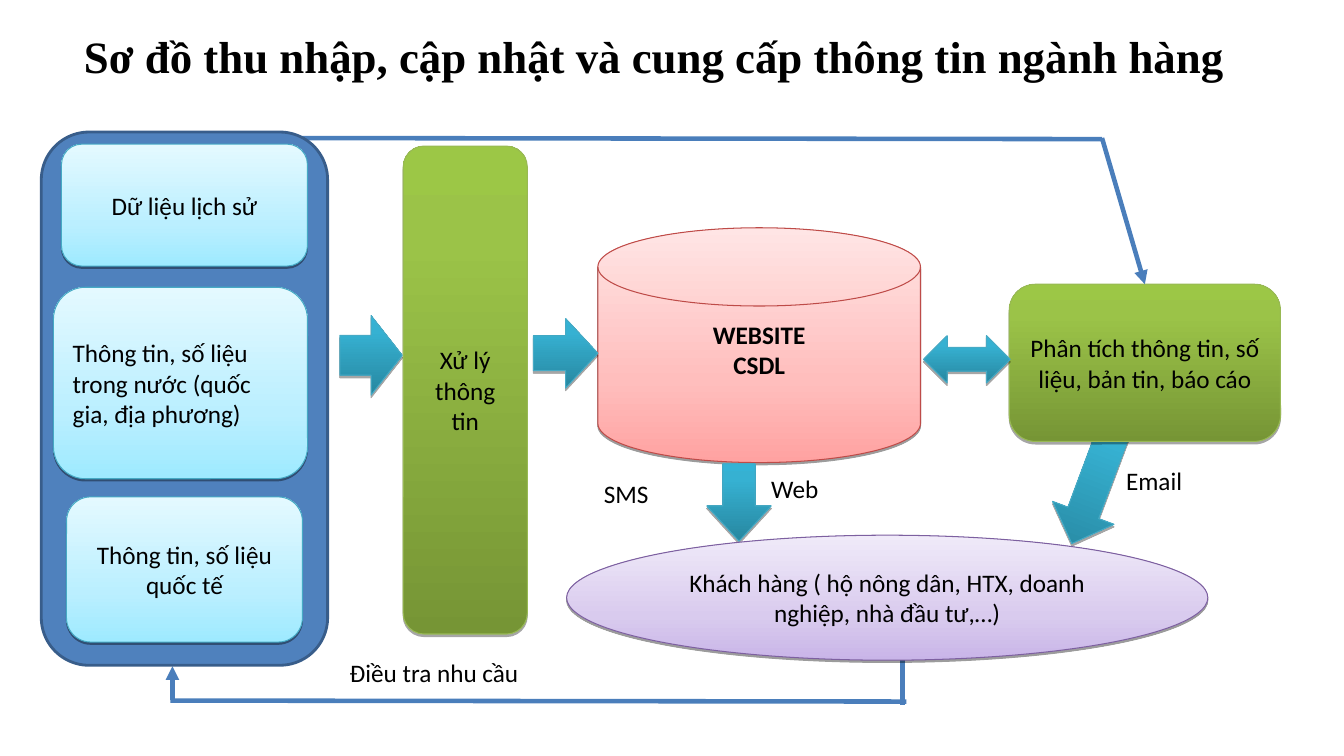
from copy import deepcopy
from lxml import etree
from pptx import Presentation
from pptx.dml.color import RGBColor
from pptx.enum.shapes import MSO_CONNECTOR, MSO_SHAPE
from pptx.enum.text import MSO_ANCHOR, MSO_AUTO_SIZE, PP_ALIGN
from pptx.oxml.ns import qn
from pptx.util import Inches, Pt

ROUND, DISK = MSO_SHAPE.ROUNDED_RECTANGLE, MSO_SHAPE.FLOWCHART_MAGNETIC_DISK
OVAL, RECT = MSO_SHAPE.OVAL, MSO_SHAPE.RECTANGLE
RIGHT, DOWN, BOTH = MSO_SHAPE.RIGHT_ARROW, MSO_SHAPE.DOWN_ARROW, MSO_SHAPE.LEFT_RIGHT_ARROW
STRAIGHT = MSO_CONNECTOR.STRAIGHT
LEFT, MID = PP_ALIGN.LEFT, PP_ALIGN.CENTER
TOP, CENTER = MSO_ANCHOR.TOP, MSO_ANCHOR.MIDDLE

THEME = {
    "text": "000000", "paper": "FFFFFF", "link": "4A7EBB",
    "panel": "4F81BD", "edge": "385D8A",
    "head": ("Times New Roman", 32), "body": ("Calibri", 18),
    "cyan": {"line": "46AAC5", "shade": (38, 1.6),
             "stops": [(0, "9EEAFF"), (0.35, "BBEFFF"), (1, "E4F9FF")]},
    "red": {"line": "BE4B48", "shade": (38, 1.6),
            "stops": [(0, "FFA2A1"), (0.35, "FFBEBD"), (1, "FFE5E5")]},
    "violet": {"line": "7D60A0", "shade": (38, 1.6),
               "stops": [(0, "C9B5E8"), (0.35, "D9CBEE"), (1, "F0EAF9")]},
    "green": {"line": "98B954", "shade": (35, 1.8),
              "stops": [(0, "769535"), (0.8, "9BC348"), (1, "9CC746")]},
    "teal": {"line": "46AAC5", "shade": (35, 1.8),
             "stops": [(0, "2787A0"), (0.8, "36B1D2"), (1, "34B3D6")]},
}


def write(shape, lines, align=MID, anchor=CENTER, font="body", bold=False):
    frame = shape.text_frame
    frame.word_wrap = True
    frame.vertical_anchor = anchor
    for i, line in enumerate(lines):
        para = frame.add_paragraph() if i else frame.paragraphs[0]
        para.alignment = align
        run = para.add_run()
        run.text = line
        run.font.name, size = THEME[font]
        run.font.size = Pt(size)
        run.font.bold = bold
        run.font.color.rgb = RGBColor.from_string(THEME["text"])


def link(x1, y1, x2, y2, arrow=False):
    line = slide.shapes.add_connector(STRAIGHT, Inches(x1), Inches(y1), Inches(x2), Inches(y2))
    line.line.color.rgb = RGBColor.from_string(THEME["link"])
    line.line.width = Pt(3.25)
    props = line.element.spPr
    if arrow:
        etree.SubElement(props.find(qn("a:ln")), qn("a:tailEnd"), type="triangle")
    etree.SubElement(props, qn("a:effectLst"))
    return line


deck = Presentation()
deck.slide_width, deck.slide_height = Inches(13.33), Inches(7.5)
slide = deck.slides.add_slide(deck.slide_layouts[5])

title = slide.shapes.title
title.left, title.top = Inches(0.28), Inches(0.23)
title.width, title.height = Inches(12.42), Inches(0.64)
write(title, ["Sơ đồ thu nhập, cập nhật và cung cấp thông tin ngành hàng"], font="head", bold=True)
title.text_frame.auto_size = MSO_AUTO_SIZE.NONE

link(2.92, 1.37, 10.93, 1.38)
link(8.95, 6.49, 8.95, 6.99)
link(1.69, 6.95, 8.99, 6.96)
link(1.71, 6.94, 1.71, 6.61, True)

panel = slide.shapes.add_shape(ROUND, Inches(0.41), Inches(1.31), Inches(2.84), Inches(5.29))
panel.shadow.inherit = False
panel.fill.solid()
panel.fill.fore_color.rgb = RGBColor.from_string(THEME["panel"])
panel.line.color.rgb = RGBColor.from_string(THEME["edge"])
panel.line.width = Pt(2)

parts = {}
for name, kind, tone, x, y, w, h, lines in [
    ("mail", DOWN, "teal", 10.51, 4.26, 0.65, 1.17, []),
    ("past", ROUND, "cyan", 0.61, 1.43, 2.44, 1.21, ["Dữ liệu lịch sử"]),
    ("home", ROUND, "cyan", 0.53, 2.85, 2.52, 1.9,
     ["Thông tin, số liệu trong nước (quốc gia, địa phương)"]),
    ("world", ROUND, "cyan", 0.66, 4.93, 2.34, 1.44, ["Thông tin, số liệu quốc tế"]),
    ("process", ROUND, "green", 4, 1.45, 1.23, 4.84, ["Xử lý thông tin"]),
    ("store", DISK, "red", 5.93, 2.26, 3.2, 2.33, ["WEBSITE", "CSDL"]),
    ("report", ROUND, "green", 10.01, 2.82, 2.69, 1.56,
     ["Phân tích thông tin, số liệu, bản tin, báo cáo"]),
    ("input", RIGHT, "teal", 3.37, 3.13, 0.62, 0.79, []),
    ("save", RIGHT, "teal", 5.29, 3.16, 0.64, 0.69, []),
    ("share", BOTH, "teal", 9.16, 3.33, 0.86, 0.47, []),
    ("web", DOWN, "teal", 7.01, 4.6, 0.64, 0.77, []),
    ("client", OVAL, "violet", 5.62, 5.31, 6.36, 1.24,
     ["Khách hàng ( hộ nông dân, HTX, doanh nghiệp, nhà đầu tư,…)"]),
]:
    part = slide.shapes.add_shape(kind, Inches(x), Inches(y), Inches(w), Inches(h))
    parts[name] = part
    style = THEME[tone]
    part.fill.gradient()
    part.fill.gradient_angle = 90
    props = part.element.spPr
    stops = props.find(qn("a:gradFill")).find(qn("a:gsLst"))
    stops.append(deepcopy(stops[0]))
    for stop, (spot, color) in zip(part.fill.gradient_stops, style["stops"]):
        stop.position = spot
        stop.color.rgb = RGBColor.from_string(color)
    part.line.color.rgb = RGBColor.from_string(style["line"])
    part.line.width = Pt(0.75)
    part.shadow.inherit = False
    alpha, drop = style["shade"]
    shade = etree.SubElement(props.find(qn("a:effectLst")), qn("a:outerShdw"), blurRad="0",
                             dist=str(Pt(drop)), dir="5400000", rotWithShape="0")
    ink = etree.SubElement(shade, qn("a:srgbClr"), val=THEME["text"])
    etree.SubElement(ink, qn("a:alpha"), val=str(alpha * 1000))
    if lines:
        write(part, lines, LEFT if name == "home" else MID, bold=name == "store")

parts["mail"].rotation = 20.5
parts["web"].adjustments[1] = 0.547
parts["store"].text_frame.margin_bottom = Inches(0.35)

feed = link(10.93, 1.37, 11.36, 2.82, True)
feed.end_connect(parts["report"], 0)

sms = slide.shapes.add_shape(RECT, Inches(5.89), Inches(4.7), Inches(1.11), Inches(0.54))
sms.shadow.inherit = False
sms.fill.solid()
sms.fill.fore_color.rgb = RGBColor.from_string(THEME["paper"])
sms.line.fill.background()
write(sms, ["SMS"], LEFT, TOP)

for label, x, y, w, h in [
    ("Web", 7.55, 4.65, 1.11, 0.51),
    ("Email", 11.07, 4.57, 1.11, 0.53),
    ("Điều tra nhu cầu", 3.37, 6.47, 2.79, 0.43),
]:
    box = slide.shapes.add_textbox(Inches(x), Inches(y), Inches(w), Inches(h))
    write(box, [label], LEFT, TOP)

deck.save("out.pptx")
